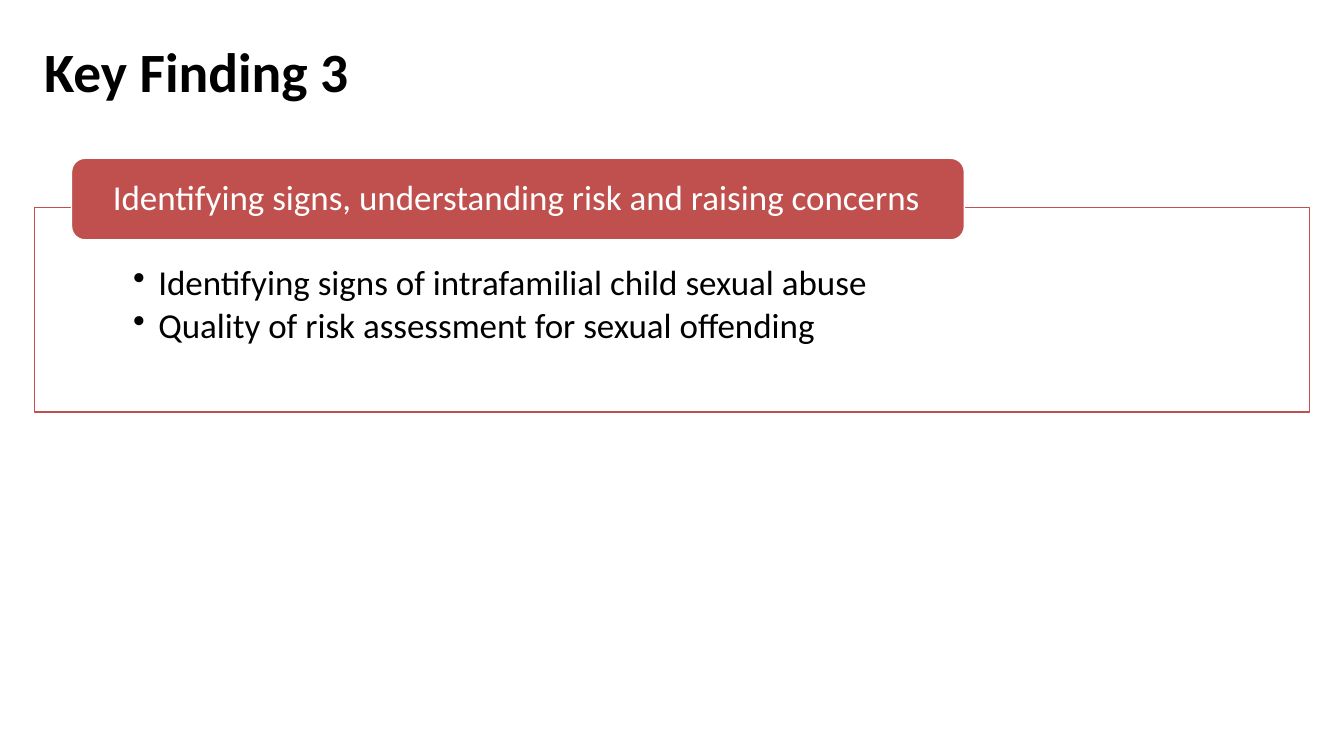
from dataclasses import dataclass
from pptx import Presentation
from pptx.dml.color import RGBColor as Rgb
from pptx.enum.shapes import MSO_SHAPE as Kind
from pptx.enum.text import MSO_ANCHOR as Anchor, PP_ALIGN as Align
from pptx.oxml.xmlchemy import OxmlElement as Node
from pptx.util import Inches, Pt

# Content
TITLE = "Key Finding 3"
LABEL = "Identifying signs, understanding risk and raising concerns"
POINTS = [
    "Identifying signs of intrafamilial child sexual abuse",
    "Quality of risk assessment for sexual offending",
]


@dataclass
class Theme:
    font: str = "Calibri"
    ink: Rgb = Rgb(0, 0, 0)
    paper: Rgb = Rgb(255, 255, 255)
    red: Rgb = Rgb(0xC0, 0x50, 0x4D)
    head: float = 39.6
    body: float = 25
    line: float = 1


# Layout in inches: the label straddles the top edge of the panel
WIDE, HIGH = 13.33, 7.5
EDGE = 0.34
HEAD = (EDGE, 0.38, 11.5, 0.71)
PANEL = (EDGE, 2.06, WIDE - 2 * EDGE, 2.03)
TAB = (0.71, 1.57, 0.7 * PANEL[2], 0.81)
HANG = 0.25

theme = Theme()
deck = Presentation()
deck.slide_width, deck.slide_height = Inches(WIDE), Inches(HIGH)
slide = deck.slides.add_slide(deck.slide_layouts[6])


def write(shape, lines, size, color, pad, anchor, after=0, bold=False):
    frame = shape.text_frame
    frame.word_wrap = True
    frame.vertical_anchor = anchor
    (frame.margin_left, frame.margin_top,
     frame.margin_right, frame.margin_bottom) = map(Inches, pad)
    frame.text = "\n".join(lines)
    for para in frame.paragraphs:
        para.alignment = Align.LEFT
        para.line_spacing = 0.9
        para.space_after = Pt(after * size)
        font = para.runs[0].font
        font.name, font.size, font.bold = theme.font, Pt(size), bold
        font.color.rgb = color


def box(kind, area, fill, line):
    shape = slide.shapes.add_shape(kind, *map(Inches, area))
    shape.shadow.inherit = False
    shape.fill.solid()
    shape.fill.fore_color.rgb = fill
    shape.line.color.rgb = line
    shape.line.width = Pt(theme.line)
    return shape


def bullet(para):
    props = para._p.get_or_add_pPr()
    props.set("marL", str(Inches(HANG)))
    props.set("indent", str(-Inches(HANG)))
    mark = Node("a:buChar")
    mark.set("char", "•")
    props.append(mark)


# Title
head = slide.shapes.add_textbox(*map(Inches, HEAD))
write(head, [TITLE], theme.head, theme.ink, (0.1, 0.05, 0.1, 0.05),
      Anchor.MIDDLE, bold=True)

# Panel with its points, on a fill of 90 % opacity
panel = box(Kind.RECTANGLE, PANEL, theme.paper, theme.red)
alpha = Node("a:alpha")
alpha.set("val", "90000")
panel.fill._xPr.solidFill[0].append(alpha)
write(panel, POINTS, theme.body, theme.ink, (0.98, 0.57, 0.98, 0.19),
      Anchor.TOP, after=0.15)
for para in panel.text_frame.paragraphs:
    bullet(para)

# Label
tab = box(Kind.ROUNDED_RECTANGLE, TAB, theme.red, theme.paper)
write(tab, [LABEL], theme.body, theme.paper, (0.37, 0.04, 0.37, 0.04),
      Anchor.MIDDLE)

deck.save("out.pptx")
